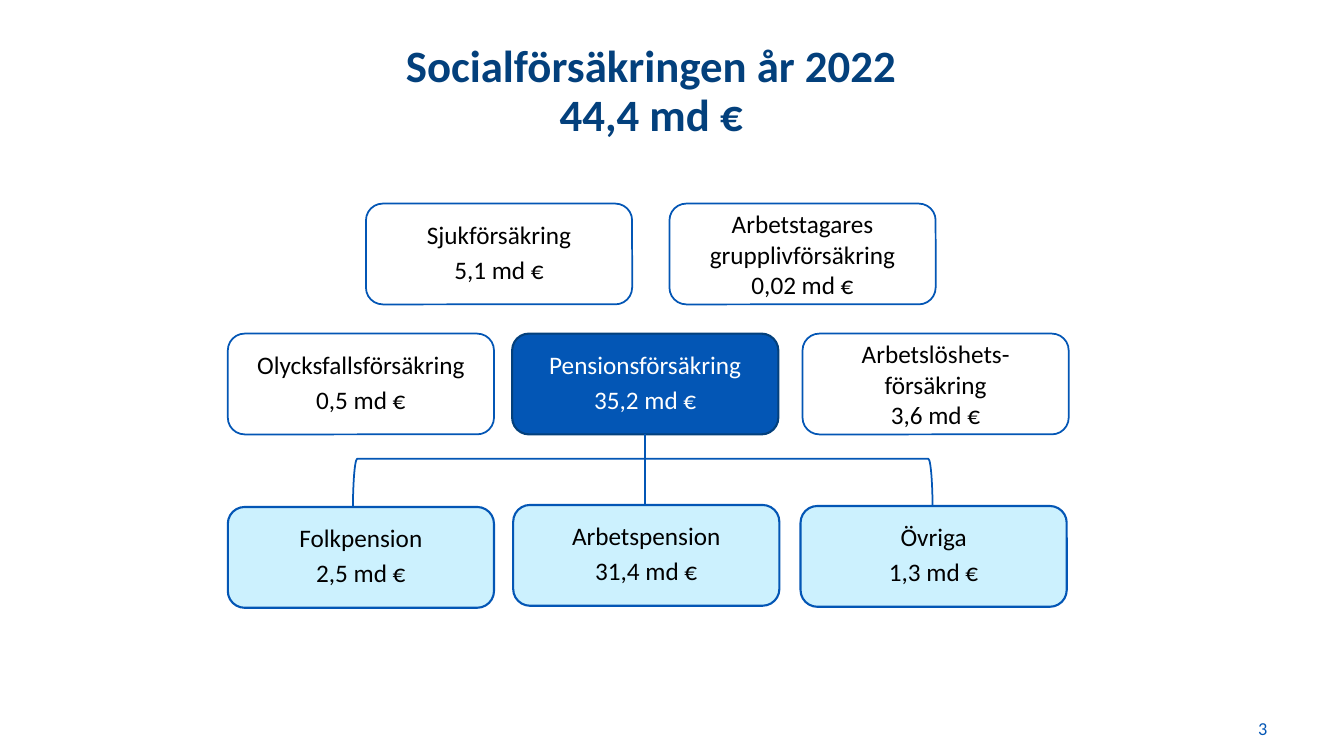
import pptx
import pptx.dml.color
import pptx.enum.shapes
import pptx.enum.text
import pptx.oxml
import pptx.util

Inches = pptx.util.Inches
Pt = pptx.util.Pt
SHAPES = pptx.enum.shapes.MSO_SHAPE
ALIGN = pptx.enum.text.PP_ALIGN
ANCHOR = pptx.enum.text.MSO_ANCHOR

COLORS = {
    "navy": "03407C",
    "blue": "0356B5",
    "pale": "CCF1FE",
    "black": "000000",
    "white": "FFFFFF",
}
BOX_WIDTH, BOX_HEIGHT = 2.64, 1

STYLES = {
    "plain": {"fill": None, "line": "blue", "width": 1.25, "color": "black"},
    "focus": {"fill": "blue", "line": "navy", "width": 1.5, "color": "white"},
    "pension": {"fill": "pale", "line": "blue", "width": 1.5, "color": "black"},
}
INSURANCES = [
    (3.63, 2.02, "plain", ["Sjukförsäkring", "5,1 md €"]),
    (6.64, 2.02, "plain", ["Arbetstagares", "grupplivförsäkring", "0,02 md €"]),
    (2.26, 3.31, "plain", ["Olycksfallsförsäkring", "0,5 md €"]),
    (5.08, 3.31, "focus", ["Pensionsförsäkring", "35,2 md €"]),
    (7.96, 3.31, "plain", ["Arbetslöshets-försäkring", "3,6 md €"]),
]
PENSIONS = [
    (2.26, 5.03, "pension", ["Folkpension", "2,5 md €"]),
    (5.09, 5.01, "pension", ["Arbetspension", "31,4 md €"]),
    (7.94, 5.02, "pension", ["Övriga", "1,3 md €"]),
]


def rgb(name):
    return pptx.dml.color.RGBColor.from_string(COLORS[name])


def write_text(shape, lines, size=18, color="black", bold=False,
               align=ALIGN.CENTER, anchor=ANCHOR.MIDDLE, spacing=1.0, gap=0):
    frame = shape.text_frame
    frame.word_wrap = True
    frame.vertical_anchor = anchor
    for index, line in enumerate(lines):
        para = frame.add_paragraph() if index else frame.paragraphs[0]
        para.text = line
        para.alignment = align
        para.line_spacing = spacing
        para.space_before = Pt(gap if index else 0)
        para.font.name = "Calibri"
        para.font.size = Pt(size)
        para.font.bold = bold
        para.font.color.rgb = rgb(color)


def add_text_box(page, left, top, width, height, lines, **text_format):
    box = page.shapes.add_textbox(
        Inches(left), Inches(top), Inches(width), Inches(height))
    write_text(box, lines, **text_format)


def add_outlined_shape(page, kind, left, top, width, height,
                       line="blue", line_width=1.25, fill=None):
    shape = page.shapes.add_shape(
        kind, Inches(left), Inches(top), Inches(width), Inches(height))
    shape.shadow.inherit = False
    if fill:
        shape.fill.solid()
        shape.fill.fore_color.rgb = rgb(fill)
    else:
        shape.fill.background()
    shape.line.color.rgb = rgb(line)
    shape.line.width = Pt(line_width)
    return shape


def add_insurance_box(page, left, top, style_name, lines):
    style = STYLES[style_name]
    box = add_outlined_shape(
        page, SHAPES.ROUNDED_RECTANGLE, left, top, BOX_WIDTH, BOX_HEIGHT,
        style["line"], style["width"], style["fill"])
    box.text_frame.margin_top = box.text_frame.margin_bottom = 0
    is_short = len(lines) == 2 and "-" not in lines[0]
    write_text(box, lines, color=style["color"],
               spacing=0.85 if is_short else 1.0, gap=6.5 if is_short else 0)


def add_branches(page, left, top, width, height):
    center_x, center_y = left + width / 2, top + height / 2
    bracket = add_outlined_shape(
        page, SHAPES.RIGHT_BRACKET, center_x - height / 2,
        center_y - width / 2, height, width)
    bracket.rotation = 270


def add_stem(page, x, top, bottom):
    stem = page.shapes.add_connector(
        pptx.enum.shapes.MSO_CONNECTOR.STRAIGHT,
        Inches(x), Inches(top), Inches(x), Inches(bottom))
    stem.line.color.rgb = rgb("blue")
    stem.line.width = Pt(1.25)
    stem._element.spPr.append(pptx.oxml.parse_xml(
        '<a:effectLst xmlns:a='
        '"http://schemas.openxmlformats.org/drawingml/2006/main"/>'))


def add_insurance_page(deck):
    page = deck.slides.add_slide(deck.slide_layouts[6])
    add_text_box(page, 0, 0.39, 12.92, 1.46,
                 ["Socialförsäkringen år 2022", "44,4 md €"],
                 size=32, color="navy", bold=True,
                 anchor=ANCHOR.TOP, spacing=0.9)
    add_branches(page, 3.5, 4.55, 5.75, 0.52)
    for insurance in INSURANCES:
        add_insurance_box(page, *insurance)
    add_stem(page, 6.4, 4.31, 5.03)
    for pension in PENSIONS:
        add_insurance_box(page, *pension)
    add_text_box(page, 12.38, 7.05, 0.44, 0.35, ["3"],
                 size=13, color="blue", align=ALIGN.LEFT)


def main():
    deck = pptx.Presentation()
    deck.slide_width = Inches(13.33)
    deck.slide_height = Inches(7.5)
    add_insurance_page(deck)
    deck.save("out.pptx")


if __name__ == "__main__":
    main()
